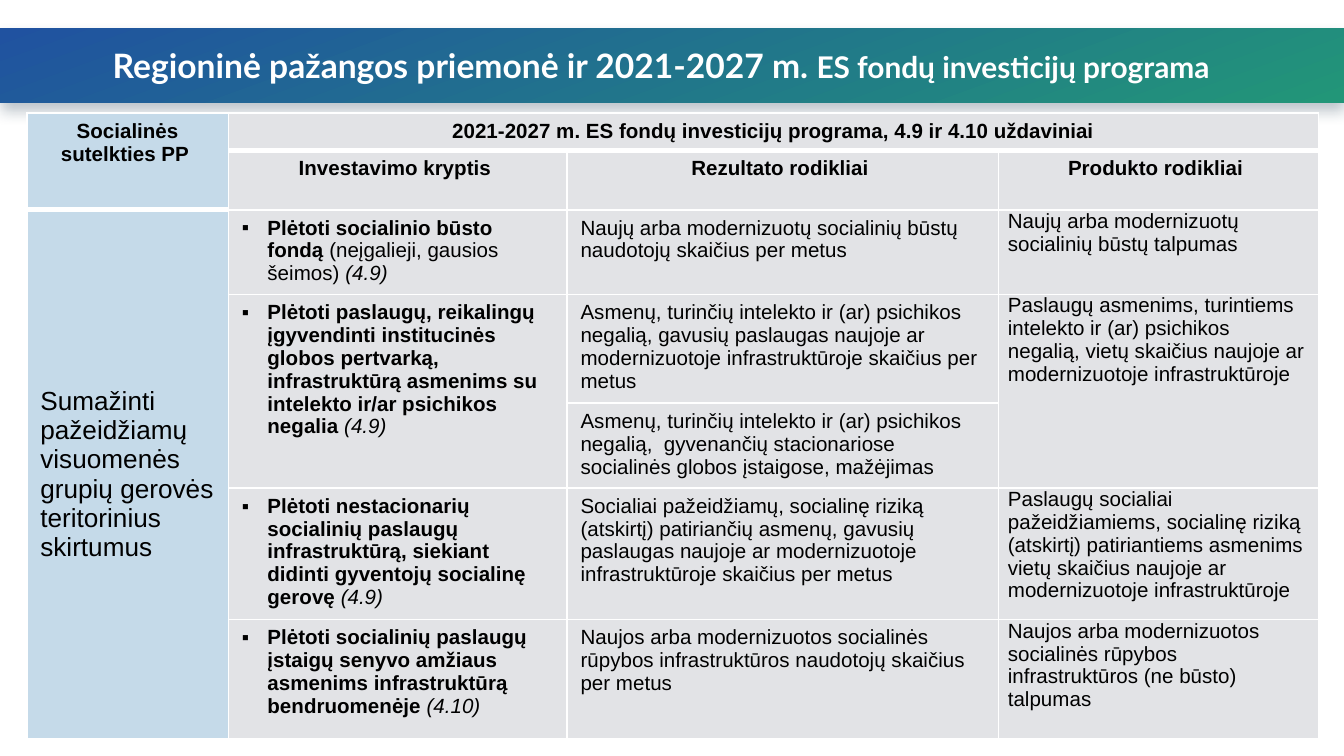
from lxml import etree
from pptx import Presentation
from pptx import util as u
from pptx.dml import color
from pptx.enum import text
from pptx.oxml import ns

BLACK, WHITE = "000000", "FFFFFF"
BLUE, GREY = "C5DAE9", "E2E3E6"
SLIDE_WIDTH = 10
COLUMNS = [1.5, 2.52, 3.21, 2.38]
ROWS = [0.28, 0.43, 0.63, 0.81, 0.63, 0.98, 0.89]
MERGES = [(0, 0, 1, 0), (0, 1, 0, 3), (2, 0, 6, 0), (3, 1, 4, 1), (3, 3, 4, 3)]

PLAIN = {"name": "Arial", "size": u.Pt(11), "bold": False, "italic": False}
BOLD = {**PLAIN, "bold": True}
ITALIC = {**PLAIN, "italic": True}
GOAL = {**PLAIN, "size": u.Pt(14)}
TITLE = {"name": "Lato", "size": u.Pt(18), "bold": True}
SUBTITLE = {**TITLE, "size": u.Pt(16)}

HEADINGS = {
    (0, 0): "Socialinės sutelkties PP ",
    (0, 1): "2021-2027 m. ES fondų investicijų programa, 4.9 ir 4.10 uždaviniai",
    (1, 1): "Investavimo kryptis ",
    (1, 2): "Rezultato rodikliai ",
    (1, 3): "Produkto rodikliai ",
}
AIM = "Sumažinti pažeidžiamų visuomenės grupių gerovės teritorinius skirtumus"
DIRECTIONS = {
    2: [("Plėtoti socialinio būsto fondą ", BOLD),
        ("(neįgalieji, gausios šeimos) ", PLAIN), ("(4.9)", ITALIC)],
    3: [("Plėtoti paslaugų, reikalingų įgyvendinti institucinės globos pertvarką, "
         "infrastruktūrą asmenims su intelekto ir/ar psichikos negalia ", BOLD),
        ("(4.9)", ITALIC)],
    5: [("Plėtoti nestacionarių socialinių paslaugų infrastruktūrą, siekiant "
         "didinti gyventojų socialinę gerovę ", BOLD), ("(4.9)", ITALIC)],
    6: [("Plėtoti socialinių paslaugų įstaigų senyvo amžiaus asmenims "
         "infrastruktūrą bendruomenėje ", BOLD), ("(4.10)", ITALIC)],
}
RESULTS = {
    2: "Naujų arba modernizuotų socialinių būstų naudotojų skaičius per metus",
    3: "Asmenų, turinčių intelekto ir (ar) psichikos negalią, gavusių paslaugas "
       "naujoje ar modernizuotoje infrastruktūroje skaičius per metus",
    4: "Asmenų, turinčių intelekto ir (ar) psichikos negalią,  gyvenančių "
       "stacionariose socialinės globos įstaigose, mažėjimas",
    5: "Socialiai pažeidžiamų, socialinę riziką (atskirtį) patiriančių asmenų, "
       "gavusių paslaugas naujoje ar modernizuotoje infrastruktūroje skaičius per metus",
    6: "Naujos arba modernizuotos socialinės rūpybos infrastruktūros naudotojų "
       "skaičius per metus",
}
PRODUCTS = {
    2: "Naujų arba modernizuotų socialinių būstų talpumas",
    3: "Paslaugų asmenims, turintiems intelekto ir (ar) psichikos negalią, vietų "
       "skaičius naujoje ar modernizuotoje infrastruktūroje",
    5: "Paslaugų socialiai pažeidžiamiems, socialinę riziką (atskirtį) patiriantiems "
       "asmenims vietų skaičius naujoje ar modernizuotoje infrastruktūroje",
    6: "Naujos arba modernizuotos socialinės rūpybos infrastruktūros (ne būsto) talpumas",
}


def rgb(value):
    return color.RGBColor.from_string(value)


def apply(target, values):
    for key, value in values.items():
        setattr(target, key, value)


def child(parent, tag, **attributes):
    node = etree.SubElement(parent, ns.qn(tag))
    for key, value in attributes.items():
        node.set(key, str(value))
    return node


def write(paragraph, pieces, ink=BLACK):
    for words, style in pieces:
        run = paragraph.add_run()
        run.text = words
        apply(run.font, style)
        run.font.color.rgb = rgb(ink)


def add_shadow(shape):
    effects = child(shape.element.spPr, "a:effectLst")
    outer = child(effects, "a:outerShdw", blurRad=u.Pt(8), dist=u.Pt(4),
                  dir=90 * 60000, algn="t", rotWithShape=0)
    tint = child(outer, "a:srgbClr", val="1F3B50")
    child(tint, "a:alpha", val=30000)


def build_banner(slide, left, top, width, height):
    banner = slide.shapes.title
    apply(banner, {"left": u.Inches(left), "top": u.Inches(top),
                   "width": u.Inches(width), "height": u.Inches(height)})
    banner.fill.gradient()
    banner.fill.gradient_angle = 290
    for stop, shade in zip(banner.fill.gradient_stops, ["2052A0", "229678"]):
        stop.color.rgb = rgb(shade)
    banner.line.fill.background()
    add_shadow(banner)
    frame = banner.text_frame
    apply(frame, {"vertical_anchor": text.MSO_ANCHOR.MIDDLE, "word_wrap": True,
                  "auto_size": text.MSO_AUTO_SIZE.NONE,
                  "margin_right": u.Inches(0.26)})
    heading = frame.paragraphs[0]
    heading.alignment = text.PP_ALIGN.CENTER
    write(heading, [("Regioninė pažangos priemonė ir 2021-2027 m. ", TITLE),
                    ("ES fondų investicijų programa", SUBTITLE)], WHITE)


def rule_below(row, column):
    return 3 if row == 0 or (row, column) == (1, 0) else 1


def paint(cell, row, column):
    properties = cell._tc.get_or_add_tcPr()
    widths = {"L": 1, "R": 1, "T": rule_below(row - 1, column) if row else 1,
              "B": rule_below(row, column)}
    for side, points in widths.items():
        border = child(properties, f"a:ln{side}", w=u.Pt(points))
        child(child(border, "a:solidFill"), "a:srgbClr", val=WHITE)
    cell.fill.solid()
    cell.fill.fore_color.rgb = rgb(GREY if column else BLUE)


def add_bullet(paragraph):
    properties = paragraph._p.get_or_add_pPr()
    properties.set("marL", str(u.Inches(0.19)))
    properties.set("indent", str(-u.Inches(0.19)))
    child(properties, "a:buFont", typeface="Arial")
    child(properties, "a:buChar", char="▪")


def build_table(slide, left, top):
    table = slide.shapes.add_table(
        len(ROWS), len(COLUMNS), u.Inches(left), u.Inches(top),
        u.Inches(sum(COLUMNS)), u.Inches(sum(ROWS))).table
    apply(table, {"first_row": False, "horz_banding": False})
    for column, width in zip(table.columns, COLUMNS):
        column.width = u.Inches(width)
    for row, height in zip(table.rows, ROWS):
        row.height = u.Inches(height)
    for row in range(len(ROWS)):
        for column in range(len(COLUMNS)):
            paint(table.cell(row, column), row, column)
    for first_row, first_column, last_row, last_column in MERGES:
        table.cell(first_row, first_column).merge(table.cell(last_row, last_column))

    for position, words in HEADINGS.items():
        heading = table.cell(*position).text_frame.paragraphs[0]
        heading.alignment = text.PP_ALIGN.CENTER
        write(heading, [(words, BOLD)])
    aim = table.cell(2, 0)
    aim.vertical_anchor = text.MSO_ANCHOR.MIDDLE
    write(aim.text_frame.paragraphs[0], [(AIM, GOAL)])
    for row, pieces in DIRECTIONS.items():
        direction = table.cell(row, 1).text_frame.paragraphs[0]
        add_bullet(direction)
        write(direction, pieces)
    for row, words in RESULTS.items():
        write(table.cell(row, 2).text_frame.paragraphs[0], [(words, PLAIN)])
    for row, words in PRODUCTS.items():
        product = table.cell(row, 3)
        apply(product, {"margin_left": u.Inches(0.07), "margin_right": u.Inches(0.08),
                        "margin_top": 0, "margin_bottom": 0})
        write(product.text_frame.paragraphs[0], [(words, PLAIN)])


def main():
    deck = Presentation()
    apply(deck, {"slide_width": u.Inches(SLIDE_WIDTH),
                 "slide_height": u.Inches(SLIDE_WIDTH * 9 / 16)})
    slide = deck.slides.add_slide(deck.slide_layouts[5])
    build_banner(slide, 0, 0.21, SLIDE_WIDTH, 0.55)
    build_table(slide, 0.2, 0.84)
    deck.save("out.pptx")


if __name__ == "__main__":
    main()
